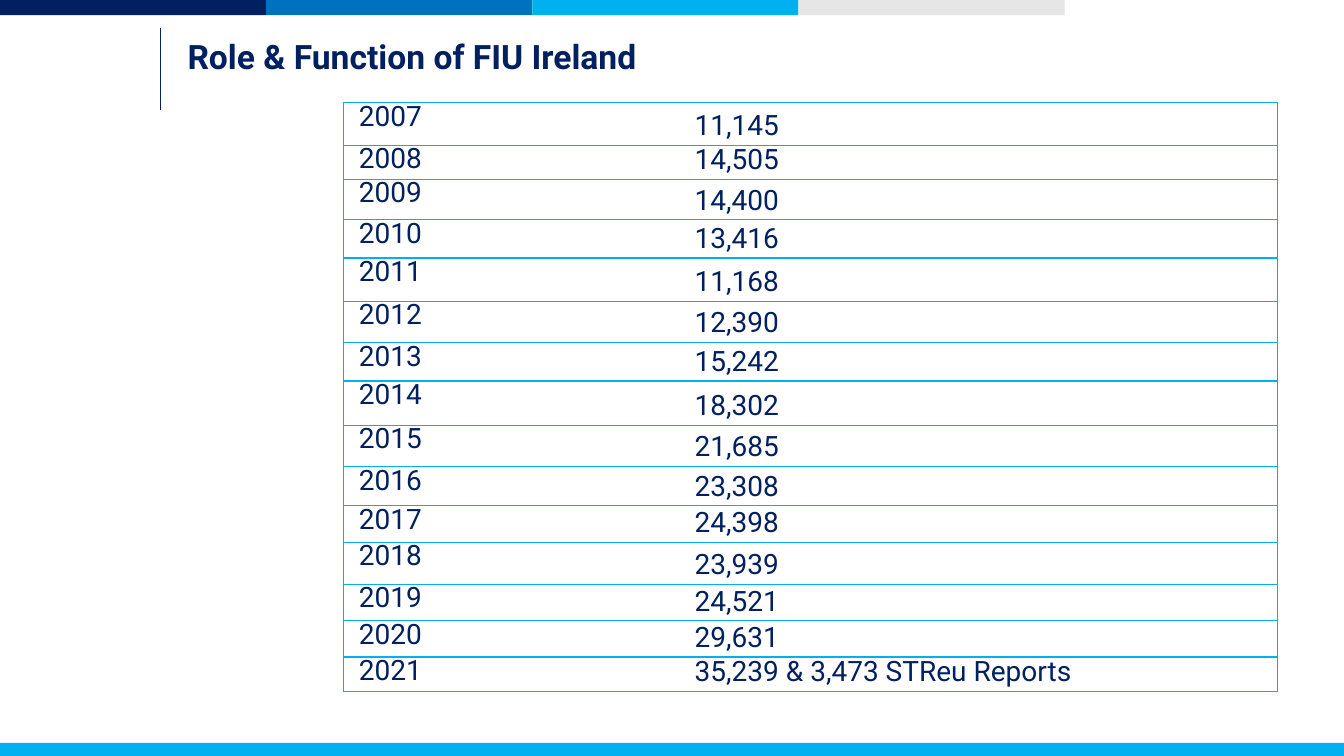
from lxml.etree import SubElement
from pptx import Presentation
from pptx.dml.color import RGBColor
from pptx.enum.shapes import MSO_CONNECTOR, MSO_SHAPE
from pptx.enum.text import MSO_ANCHOR, PP_ALIGN
from pptx.oxml import parse_xml
from pptx.oxml.ns import nsdecls, qn
from pptx.util import Inches, Pt

NAVY, BLUE, CYAN, GRAY, WHITE = "002060", "0070C0", "00B0F0", "E7E6E6", "FFFFFF"
PLAIN_TABLE_STYLE = "{2D5ABB26-0587-4C30-8999-92F81FD0307C}"

REPORTS = [
    ("2007", "11,145", 0.42), ("2008", "14,505", 0.34), ("2009", "14,400", 0.4),
    ("2010", "13,416", 0.38), ("2011", "11,168", 0.43), ("2012", "12,390", 0.41),
    ("2013", "15,242", 0.38), ("2014", "18,302", 0.44), ("2015", "21,685", 0.41),
    ("2016", "23,308", 0.39), ("2017", "24,398", 0.36), ("2018", "23,939", 0.42),
    ("2019", "24,521", 0.36), ("2020", "29,631", 0.36),
    ("2021", "35,239 & 3,473 STReu Reports", 0.34),
]


def color(hex_value):
    return RGBColor.from_string(hex_value)


def apply_format(target, values):
    for name, value in values.items():
        setattr(target, name, value)


class SlideBuilder:
    title_font = {"name": "Roboto", "size": Pt(24), "bold": True}
    table_font = {"name": "Roboto", "size": Pt(20), "bold": False}
    cell_margins = {"margin_left": Inches(0.15), "margin_right": Inches(0.15),
                    "margin_top": Inches(0.05), "margin_bottom": Inches(0.05)}

    def __init__(self, slide):
        self.slide = slide

    def fill_paragraph(self, paragraph, text, font, line_spacing):
        paragraph.text = text
        apply_format(paragraph, {"alignment": PP_ALIGN.LEFT, "line_spacing": line_spacing})
        apply_format(paragraph.font, font)
        paragraph.font.color.rgb = color(NAVY)

    def title(self, text, left, top, width, height):
        shape = self.slide.shapes.title
        apply_format(shape, {"left": Inches(left), "top": Inches(top),
                             "width": Inches(width), "height": Inches(height)})
        apply_format(shape.text_frame, {"vertical_anchor": MSO_ANCHOR.TOP, "word_wrap": True})
        self.fill_paragraph(shape.text_frame.paragraphs[0], text, self.title_font, 0.9)

    def bar(self, left, top, width, height, fill):
        shape = self.slide.shapes.add_shape(
            MSO_SHAPE.RECTANGLE, Inches(left), Inches(top), Inches(width), Inches(height))
        shape.shadow.inherit = False
        shape.fill.solid()
        shape.fill.fore_color.rgb = color(fill)
        shape.line.fill.background()

    def vertical_line(self, left, top, bottom):
        line = self.slide.shapes.add_connector(
            MSO_CONNECTOR.STRAIGHT, Inches(left), Inches(top), Inches(left), Inches(bottom))
        line.line.color.rgb = color(NAVY)
        line.line.width = Pt(0.5)
        SubElement(line._element.spPr, qn("a:effectLst"))

    def borders(self, cell, sides):
        """Draw cyan borders on the given sides, named in L, R, T, B order."""
        properties = cell._tc.get_or_add_tcPr()
        for position, side in enumerate(sides):
            properties.insert(position, parse_xml(
                f'<a:ln{side} {nsdecls("a")} w="{Pt(1)}"><a:solidFill>'
                f'<a:srgbClr val="{CYAN}"/></a:solidFill></a:ln{side}>'))

    def cell(self, cell, text, anchor, sides):
        apply_format(cell, {**self.cell_margins, "vertical_anchor": anchor})
        cell.fill.solid()
        cell.fill.fore_color.rgb = color(WHITE)
        self.borders(cell, sides)
        self.fill_paragraph(cell.text_frame.paragraphs[0], text, self.table_font, 0.7)

    def table(self, rows, left, top, column_widths):
        height = sum(row[-1] for row in rows)
        table = self.slide.shapes.add_table(
            len(rows), len(column_widths), Inches(left), Inches(top),
            Inches(sum(column_widths)), Inches(height)).table
        apply_format(table, {"first_row": False, "horz_banding": False})
        table._tbl.tblPr.find(qn("a:tableStyleId")).text = PLAIN_TABLE_STYLE
        for column, width in zip(table.columns, column_widths):
            column.width = Inches(width)
        for index, (year, count, row_height) in enumerate(rows):
            table.rows[index].height = Inches(row_height)
            self.cell(table.cell(index, 0), year, MSO_ANCHOR.TOP, "LTB")
            self.cell(table.cell(index, 1), count, MSO_ANCHOR.BOTTOM, "RTB")


def main():
    presentation = Presentation()
    presentation.slide_width = Inches(13.33)
    presentation.slide_height = Inches(7.5)
    builder = SlideBuilder(presentation.slides.add_slide(presentation.slide_layouts[5]))

    builder.bar(0, 7.37, 13.33, 0.13, CYAN)
    for index, fill in enumerate((NAVY, BLUE, CYAN, GRAY)):
        builder.bar(index * 2.64, 0, 2.64, 0.15, fill)
    builder.vertical_line(1.59, 0.28, 1.09)
    builder.title("Role & Function of FIU Ireland", 1.76, 0.35, 7.61, 0.56)
    builder.table(REPORTS, 3.41, 1.02, (3.33, 5.93))
    presentation.save("out.pptx")


if __name__ == "__main__":
    main()
